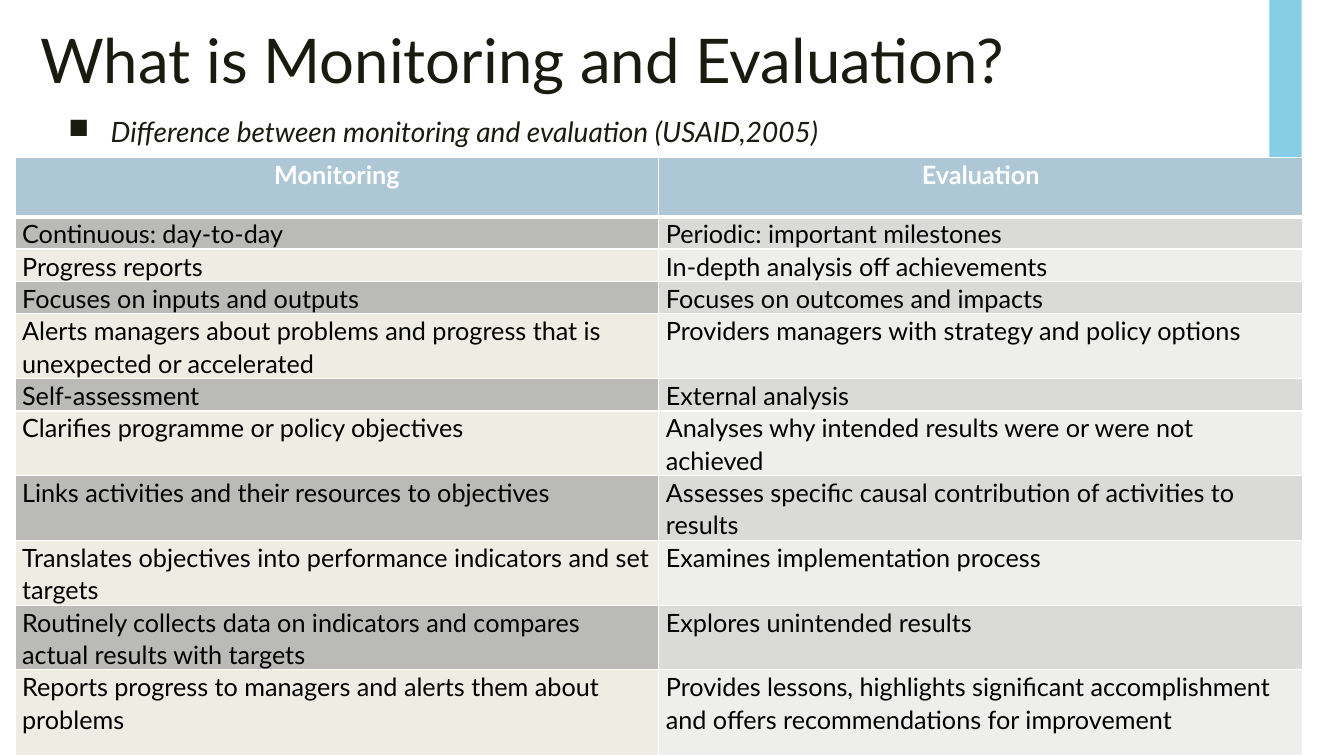
from dataclasses import dataclass

from lxml import etree
from pptx import Presentation
from pptx.dml.color import RGBColor
from pptx.enum.shapes import MSO_SHAPE
from pptx.enum.text import MSO_ANCHOR, PP_ALIGN
from pptx.oxml.ns import qn
from pptx.util import Inches, Pt

RECTANGLE = MSO_SHAPE.RECTANGLE
TOP, MIDDLE = MSO_ANCHOR.TOP, MSO_ANCHOR.MIDDLE
LEFT, CENTER = PP_ALIGN.LEFT, PP_ALIGN.CENTER
TITLE_ONLY = 5


@dataclass(frozen=True)
class Theme:
    font: str = "Lato"
    ink: str = "191B0E"
    table_ink: str = "000000"
    white: str = "FFFFFF"
    accent: str = "86CEE3"
    header: str = "ADC7D6"
    bands: tuple = (("BABBB6", "DADBD9"), ("EFEDE3", "EEEEED"))
    title_size: int = 44
    subtitle_size: int = 20
    table_size: int = 18


THEME = Theme()

HEADINGS = ("Monitoring", "Evaluation")
COMPARISONS = [
    ("Continuous: day-to-day", "Periodic: important milestones"),
    ("Progress reports", "In-depth analysis off achievements"),
    ("Focuses on inputs and outputs", "Focuses on outcomes and impacts"),
    ("Alerts managers about problems and progress that is unexpected or accelerated",
     "Providers managers with strategy and policy options"),
    ("Self-assessment", "External analysis"),
    ("Clarifies programme or policy objectives",
     "Analyses why intended results were or were not achieved"),
    ("Links activities and their resources to objectives",
     "Assesses specific causal contribution of activities to results"),
    ("Translates objectives into performance indicators and set targets",
     "Examines implementation process"),
    ("Routinely collects data on indicators and compares actual results with targets",
     "Explores unintended results"),
    ("Reports progress to managers and alerts them about problems",
     "Provides lessons, highlights significant accomplishment and offers "
     "recommendations for improvement"),
]
SINGLE, DOUBLE = 0.27, 0.56
ROW_HEIGHTS = [0.59, SINGLE, SINGLE, SINGLE, DOUBLE, SINGLE,
               DOUBLE, DOUBLE, DOUBLE, DOUBLE, 0.85]


def write_text(frame, text, size, color, bold=False, italic=False,
               align=LEFT, spacing=1.0, bullet=None, indent=0):
    frame.word_wrap = True
    para = frame.paragraphs[0]
    if bullet:
        properties = para._p.get_or_add_pPr()
        properties.set("marL", str(Inches(indent)))
        properties.set("indent", str(-Inches(indent)))
        etree.SubElement(properties, qn("a:buChar")).set("char", bullet)
    para.alignment = align
    para.line_spacing = spacing
    para.space_before = Pt(0)
    span = para.add_run()
    span.text = text
    span.font.name = THEME.font
    span.font.size = Pt(size)
    span.font.bold = bold
    span.font.italic = italic
    span.font.color.rgb = RGBColor.from_string(color)


def add_accent_bar(page):
    bar = page.shapes.add_shape(
        RECTANGLE, Inches(12.59), Inches(0), Inches(0.32), Inches(2.37))
    bar.shadow.inherit = False
    bar.fill.solid()
    bar.fill.fore_color.rgb = RGBColor.from_string(THEME.accent)
    bar.line.fill.background()


def add_title(page, text):
    title = page.shapes.title
    title.left, title.top = Inches(0.3), Inches(0.24)
    title.width, title.height = Inches(11.67), Inches(0.78)
    title.text_frame.vertical_anchor = MIDDLE
    write_text(title.text_frame, text, THEME.title_size, THEME.ink, spacing=0.89)


def add_subtitle(page, text):
    box = page.shapes.add_textbox(
        Inches(0.58), Inches(1.11), Inches(11.56), Inches(0.64))
    box.text_frame.vertical_anchor = TOP
    write_text(box.text_frame, text, THEME.subtitle_size, THEME.ink,
               italic=True, spacing=0.94, bullet="■", indent=0.42)


def set_borders(cell, **widths):
    properties = cell._tc.get_or_add_tcPr()
    for side in "LRTB":
        line = etree.SubElement(properties, qn(f"a:ln{side}"))
        line.set("w", str(Pt(widths.get(side, 1))))
        fill = etree.SubElement(line, qn("a:solidFill"))
        etree.SubElement(fill, qn("a:srgbClr")).set("val", THEME.white)


def fill_cell(cell, text, fill, color, bold=False, align=LEFT, **borders):
    cell.margin_left = cell.margin_right = Inches(0.07)
    cell.margin_top = cell.margin_bottom = Inches(0)
    set_borders(cell, **borders)
    cell.fill.solid()
    cell.fill.fore_color.rgb = RGBColor.from_string(fill)
    write_text(cell.text_frame, text, THEME.table_size, color,
               bold=bold, align=align, spacing=1.07)


def add_comparison_table(page):
    table = page.shapes.add_table(
        len(ROW_HEIGHTS), len(HEADINGS), Inches(0.15), Inches(1.56),
        Inches(12.77), Inches(sum(ROW_HEIGHTS))).table
    for row, height in zip(table.rows, ROW_HEIGHTS):
        row.height = Inches(height)
    for column, heading in enumerate(HEADINGS):
        fill_cell(table.cell(0, column), heading, THEME.header, THEME.white,
                  bold=True, align=CENTER, B=3)
    for index, comparison in enumerate(COMPARISONS):
        band = THEME.bands[index % 2]
        for column, text in enumerate(comparison):
            fill_cell(table.cell(index + 1, column), text, band[column],
                      THEME.table_ink, T=1 if index else 3)


def main():
    deck = Presentation()
    deck.slide_width, deck.slide_height = Inches(13.33), Inches(7.5)
    page = deck.slides.add_slide(deck.slide_layouts[TITLE_ONLY])
    add_accent_bar(page)
    add_title(page, "What is Monitoring and Evaluation?")
    add_subtitle(page, "Difference between monitoring and evaluation (USAID,2005)")
    add_comparison_table(page)
    deck.save("out.pptx")


if __name__ == "__main__":
    main()
